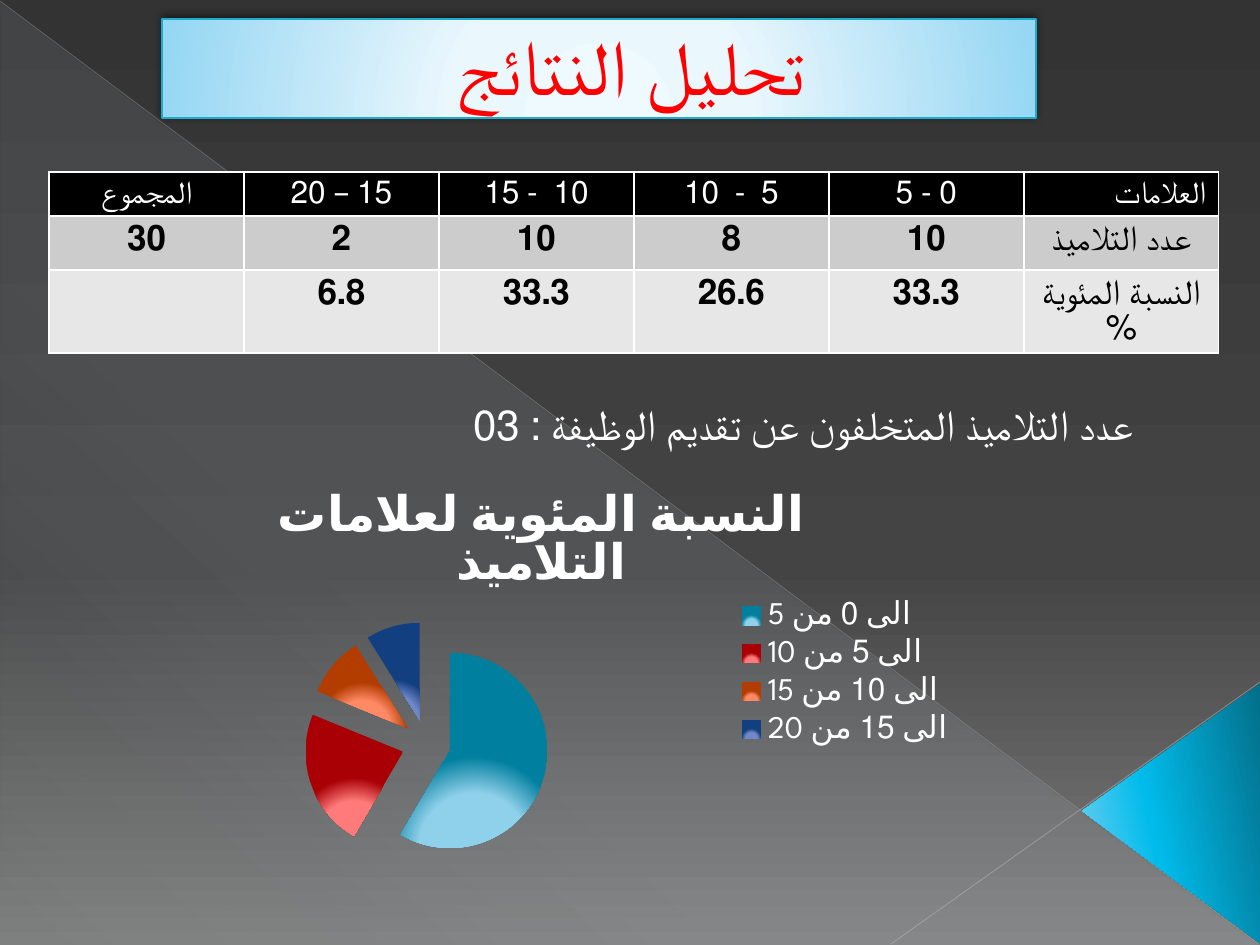
import pptx
import pptx.chart.data
import pptx.dml.color
import pptx.enum.chart
import pptx.enum.shapes
import pptx.enum.text
import pptx.oxml
import pptx.oxml.ns
import pptx.util

PX = 914400 / 126
HEADING, BODY, LABEL = "Calibri", "League Spartan", "Roboto"
WHITE, BLACK, RED = "FFFFFF", "000000", "FF0000"
ALIGN = pptx.enum.text.PP_ALIGN
SHAPE = pptx.enum.shapes.MSO_SHAPE
qn = pptx.oxml.ns.qn


def px(*lengths):
    return [round(length * PX) for length in lengths]


def rgb(value):
    return pptx.dml.color.RGBColor.from_string(value)


def xml(tag, body="", attributes=""):
    spaces = pptx.oxml.ns.nsdecls("a", "c")
    return pptx.oxml.parse_xml(f"<{tag} {spaces} {attributes}>{body}</{tag}>")


def color_xml(value, alpha=100):
    return f'<a:srgbClr val="{value}"><a:alpha val="{alpha * 1000}"/></a:srgbClr>'


def set_gradient(fill, owner, stops, angle=None):
    """Linear at an angle, or else circular around a point below the shape."""
    fill.gradient()
    stop_xml = "".join(f'<a:gs pos="{pos * 1000}">{color_xml(*color)}</a:gs>'
                       for pos, *color in stops)
    if angle is None:
        way = ('<a:path path="circle"><a:fillToRect l="50000" t="155000" '
               'r="50000" b="-55000"/></a:path>')
    else:
        way = f'<a:lin ang="{angle * 60000}" scaled="0"/>'
    old = owner.find(".//" + qn("a:gradFill"))
    new = xml("a:gradFill", f"<a:gsLst>{stop_xml}</a:gsLst>{way}", 'rotWithShape="1"')
    old.getparent().replace(old, new)


def style_font(font, *, size, color=WHITE, name=BODY, bold=False):
    font.size = pptx.util.Pt(size)
    font.name = name
    font.bold = bold
    font.color.rgb = rgb(color)


def write(frame, text, *, align=ALIGN.CENTER, rtl=True, **font):
    para = frame.paragraphs[0]
    para.alignment = align
    if rtl:
        para._p.get_or_add_pPr().set("rtl", "1")
    span = para.add_run()
    span.text = text
    style_font(span.font, **font)
    return para


class Board:
    def __init__(self, deck):
        self.page = deck.slides.add_slide(deck.slide_layouts[6])

    def background(self, stops, angle):
        set_gradient(self.page.background.fill, self.page.element, stops, angle)

    def shape(self, kind, place, stops, angle=None, rotation=0):
        shape = self.page.shapes.add_shape(kind, *px(*place))
        shape.shadow.inherit = False
        set_gradient(shape.fill, shape.element, stops, angle)
        shape.line.fill.background()
        shape.rotation = rotation
        return shape

    def line(self, ends, color, width, alpha):
        line = self.page.shapes.add_connector(
            pptx.enum.shapes.MSO_CONNECTOR.STRAIGHT, *px(*ends))
        line.line.width = pptx.util.Pt(width)
        line.line.color.rgb = rgb(color)
        tint = line.element.spPr.find(".//" + qn("a:srgbClr"))
        tint.append(xml("a:alpha", attributes=f'val="{alpha * 1000}"'))
        line.element.spPr.append(xml("a:effectLst"))

    def text(self, place, text, **style):
        box = self.page.shapes.add_textbox(*px(*place))
        box.text_frame.word_wrap = True
        write(box.text_frame, text, **style)

    def table(self, place, heights, rows, fills, style_for):
        table = self.page.shapes.add_table(
            len(rows), len(rows[0]), *px(*place)).table
        for column in table.columns:
            column.width = px(place[2] / len(rows[0]))[0]
        for r, row in enumerate(rows):
            table.rows[r].height = px(heights[r])[0]
            for c, text in enumerate(row):
                cell = table.cell(r, c)
                if text:
                    write(cell.text_frame, text, **style_for(r, c))
                self.borders(cell)
                cell.fill.solid()
                cell.fill.fore_color.rgb = rgb(fills[r])

    def borders(self, cell):
        for side in "LRTB":
            cell._tc.get_or_add_tcPr().append(xml(
                f"a:ln{side}", f"<a:solidFill>{color_xml(WHITE)}</a:solidFill>",
                'w="12700"'))

    def pie(self, place, title, values, shades, plot_box):
        data = pptx.chart.data.CategoryChartData()
        data.categories = list(values)
        data.add_series(title, list(values.values()))
        chart = self.page.shapes.add_chart(
            pptx.enum.chart.XL_CHART_TYPE.PIE, *px(*place), data).chart
        style_font(chart.font, size=18)
        chart.has_title = True
        write(chart.chart_title.text_frame, title, rtl=False, size=28, bold=True)
        chart.chart_title._element.find(qn("c:overlay")).set("val", "1")
        chart.has_legend = True
        chart.legend.position = pptx.enum.chart.XL_LEGEND_POSITION.RIGHT
        chart.legend.include_in_layout = True
        style_font(chart.legend.font, size=18)

        # Slices, pulled apart
        series = chart.plots[0].series[0]
        for index, (light, dark) in enumerate(shades):
            fill = series.points[index].format.fill
            fill.solid()
            slice_xml = series._element.findall(qn("c:dPt"))[index]
            set_gradient(fill, slice_xml,
                         [(0, light), (45, light), (75, dark), (100, dark)])
        series._element.find(qn("c:dPt")).addprevious(
            xml("c:explosion", attributes='val="25"'))

        # Place of the pie, as shares of the chart
        parts = '<c:layoutTarget val="inner"/><c:xMode val="edge"/><c:yMode val="edge"/>'
        parts += "".join(f'<c:{key} val="{share}"/>'
                         for key, share in zip("xywh", plot_box))
        area = chart._chartSpace.find(".//" + qn("c:plotArea"))
        for old in area.findall(qn("c:layout")):
            area.remove(old)
        area.insert(0, xml("c:layout", f"<c:manualLayout>{parts}</c:manualLayout>"))


def cell_style(row, column):
    label = column == 5
    return dict(
        name=LABEL if label else BODY,
        size=20 if row else 18,
        color=BLACK if row else WHITE,
        bold=bool(row) and not label,
        align=ALIGN.RIGHT if label and not row else ALIGN.CENTER)


def main():
    deck = pptx.Presentation()
    deck.slide_width, deck.slide_height = px(1260, 945)
    board = Board(deck)

    # Backdrop
    board.background([(0, "333333"), (60, "444444"), (100, "7D7D7D")], 90)
    board.shape(SHAPE.RIGHT_TRIANGLE, (1, 2, 1258, 943),
                [(0, "DEF5FA", 10), (70, "DEF5FA", 8), (100, "DEF5FA", 1)], 133)
    board.line((0, 1, 1259, 944), "B9B9B9", 0.39, 35)
    board.line((1260, 682, 891, 944), "C1C1C1", 0.47, 45)
    corner = board.shape(SHAPE.ISOSCELES_TRIANGLE, (1041, 724, 261, 179),
                         [(0, "036E89"), (60, "01BCEB"), (100, "7CD1F2")], 258, 270)
    corner.adjustments[0] = 0.51

    # Title
    banner = board.shape(SHAPE.RECTANGLE, (162, 19, 874, 99),
                         [(0, "EEFAFF"), (34, "EAF7FD"), (100, "96D7F3")])
    banner.line.color.rgb = rgb("1EABCE")
    banner.line.width = pptx.util.Pt(0.75)
    banner.element.spPr.find(qn("a:effectLst")).append(xml(
        "a:outerShdw", color_xml(BLACK, 50),
        'blurRad="63500" dist="25400" dir="14700000" rotWithShape="0"'))
    banner.text_frame.word_wrap = True
    banner.text_frame.vertical_anchor = pptx.enum.text.MSO_ANCHOR.BOTTOM
    para = write(banner.text_frame, "تحليل النتائج", rtl=False,
                 size=44, color=RED, name=HEADING)
    para.line_spacing = 0.9
    para._p.get_or_add_pPr().set("marL", str(px(67)[0]))

    # Marks table
    board.table((49, 172, 1170, 180), (44, 54, 82), [
        ["المجموع", "15 – 20", "10  - 15", "5  -  10", "0 - 5", "العلامات"],
        ["30", "2", "10", "8", "10", "عدد التلاميذ"],
        ["", "6.8", "33.3", "26.6", "33.3", "النسبة المئوية %"],
    ], [BLACK, "CCCCCC", "E7E7E7"], cell_style)

    # Remark and chart
    board.text((256, 392, 890, 63), "عدد التلاميذ المتخلفون عن تقديم الوظيفة : 03",
               size=24, align=ALIGN.RIGHT)
    board.pie((115, 462, 853, 421), "النسبة المئوية لعلامات التلاميذ", {
        "5 الى 0 من": 59, "10 الى 5 من": 23, "15 الى 10 من": 10, "20 الى 15 من": 9,
    }, [("8FD0EA", "007F9F"), ("FF7B7B", "A90006"),
        ("FF8A65", "B33C00"), ("7088C8", "123F80")], (0.22, 0.38, 0.29, 0.58))

    deck.save("out.pptx")


if __name__ == "__main__":
    main()
